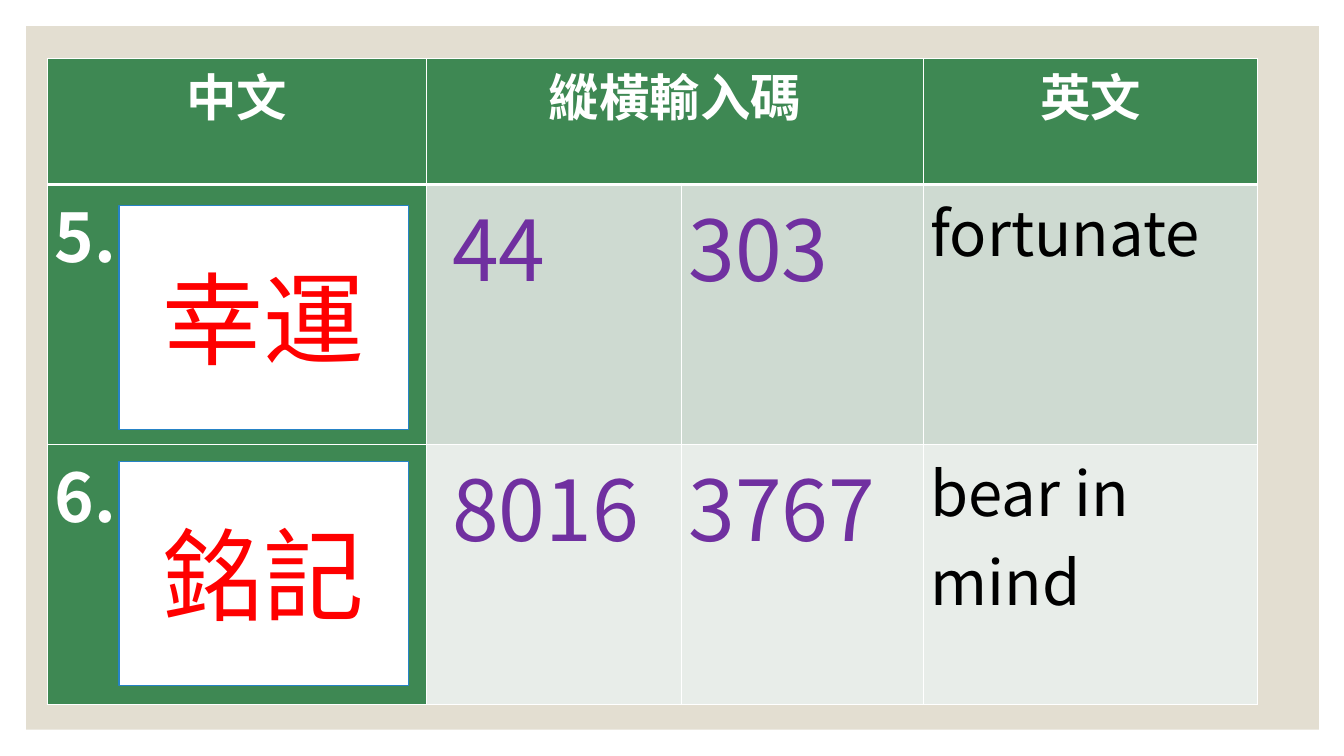
import pptx
import pptx.dml.color
import pptx.enum.shapes
import pptx.enum.text
import pptx.oxml
import pptx.oxml.ns
import pptx.util
from pptx.util import Inches

FONT = "Noto Sans CJK SC"
COLORS = {
    "white": "FFFFFF", "frame": "E3DED1", "green": "3E8853",
    "band_dark": "CEDAD1", "band_light": "E8EDE9", "code": "7030A0",
    "black": "000000", "word": "FF0000", "outline": "2683C6",
}
HEADERS = ["中文", "縱橫輸入碼", None, "英文"]
WORDS = [
    ("5.", "幸運", " 44", "303", "fortunate"),
    ("6.", "銘記", " 8016", "3767", "bear in mind"),
]
COL_WIDTHS = [3.76, 2.53, 2.4, 3.31]
HEADER_HEIGHT, ROW_HEIGHT = 1.25, 2.58
# Size, colour and weight of the text in each column of a word row
COL_STYLES = [(48, "white", True), (60, "code", False),
              (60, "code", False), (44, "black", False)]


def rgb(name):
    return pptx.dml.color.RGBColor.from_string(COLORS[name])


def add_text(tf, text, size, color, bold=False, centered=False):
    p = tf.paragraphs[0]
    p.alignment = (pptx.enum.text.PP_ALIGN.CENTER if centered
                   else pptx.enum.text.PP_ALIGN.LEFT)
    r = p.add_run()
    r.text = text
    r.font.size = pptx.util.Pt(size)
    r.font.bold = bold
    r.font.name = FONT
    r.font.color.rgb = rgb(color)
    ea = pptx.oxml.parse_xml(
        f'<a:ea {pptx.oxml.ns.nsdecls("a")} typeface="{FONT}"/>')
    r.font._element.append(ea)


def add_box(slide, left, top, width, height, fill, outline=None):
    sp = slide.shapes.add_shape(
        pptx.enum.shapes.MSO_SHAPE.RECTANGLE,
        Inches(left), Inches(top), Inches(width), Inches(height))
    sp.shadow.inherit = False
    sp.fill.solid()
    sp.fill.fore_color.rgb = rgb(fill)
    if outline:
        sp.line.color.rgb = rgb(outline)
        sp.line.width = pptx.util.Pt(1)
    else:
        sp.line.fill.background()
    return sp


def style_cell(cell, fill, top=1, bottom=1):
    """Set margins, white borders (widths in points) and fill."""
    cell.margin_left = cell.margin_right = Inches(0.07)
    cell.margin_top = cell.margin_bottom = 0
    tc_pr = cell._tc.get_or_add_tcPr()
    for side, width in (("L", 1), ("R", 1), ("T", top), ("B", bottom)):
        tc_pr.append(pptx.oxml.parse_xml(
            f'<a:ln{side} {pptx.oxml.ns.nsdecls("a")} w="{pptx.util.Pt(width)}">'
            f'<a:solidFill><a:srgbClr val="{COLORS["white"]}"/></a:solidFill>'
            f'</a:ln{side}>'))
    cell.fill.solid()
    cell.fill.fore_color.rgb = rgb(fill)


def add_word_table(slide, left, top):
    height = HEADER_HEIGHT + ROW_HEIGHT * len(WORDS)
    table = slide.shapes.add_table(
        len(WORDS) + 1, len(COL_WIDTHS), Inches(left), Inches(top),
        Inches(sum(COL_WIDTHS)), Inches(height)).table
    for col, width in zip(table.columns, COL_WIDTHS):
        col.width = Inches(width)
    for i, row in enumerate(table.rows):
        row.height = Inches(ROW_HEIGHT if i else HEADER_HEIGHT)

    table.cell(0, 1).merge(table.cell(0, 2))
    for j, header in enumerate(HEADERS):
        cell = table.cell(0, j)
        style_cell(cell, "green", bottom=3)
        if header:
            add_text(cell.text_frame, header, 36, "white", True, centered=True)

    for i, (number, _, *rest) in enumerate(WORDS, start=1):
        band = "band_dark" if i % 2 else "band_light"
        for j, text in enumerate([number, *rest]):
            cell = table.cell(i, j)
            style_cell(cell, band if j else "green", top=3 if i == 1 else 1)
            add_text(cell.text_frame, text, *COL_STYLES[j])


def add_word_cards(slide, left, top, pitch):
    for i, (_, word, *_) in enumerate(WORDS):
        sp = add_box(slide, left, top + i * pitch, 2.87, 2.22, "white", "outline")
        tf = sp.text_frame
        tf.word_wrap = True
        tf.vertical_anchor = pptx.enum.text.MSO_ANCHOR.MIDDLE
        add_text(tf, word, 72, "word", centered=True)


def build_vocabulary_slide(prs):
    slide = prs.slides.add_slide(prs.slide_layouts[6])
    slide.background.fill.solid()
    slide.background.fill.fore_color.rgb = rgb("white")
    add_box(slide, 0.26, 0.26, 12.82, 6.98, "frame")
    left, top = 0.47, 0.58
    add_word_table(slide, left, top)
    add_word_cards(slide, left + 0.71, top + 1.46, 2.54)


def main():
    prs = pptx.Presentation()
    prs.slide_width, prs.slide_height = Inches(13.33), Inches(7.5)
    build_vocabulary_slide(prs)
    prs.save("out.pptx")


if __name__ == "__main__":
    main()
